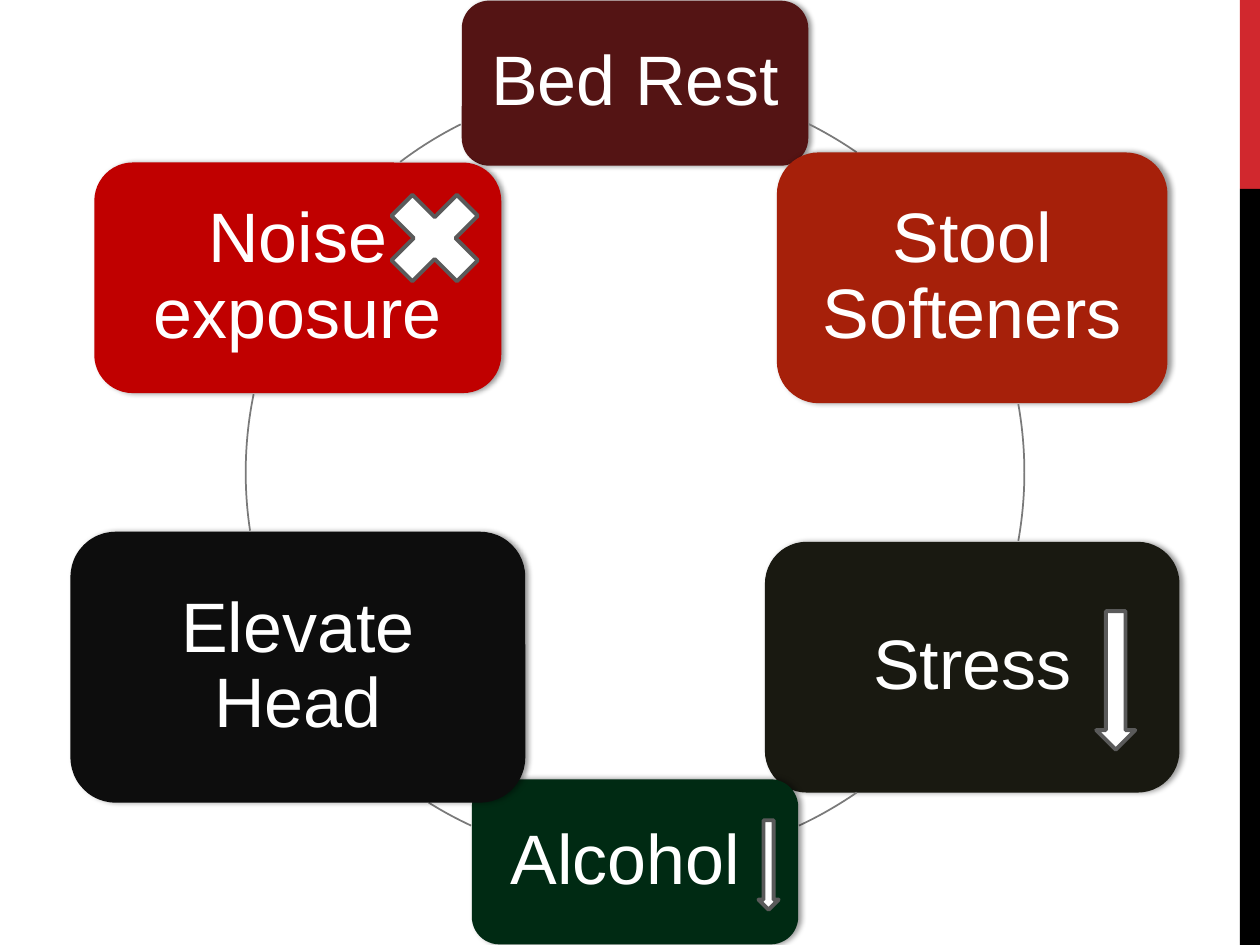
import math

from lxml import etree
from pptx import Presentation, util as u
from pptx.dml.color import RGBColor
from pptx.enum import shapes, text
from pptx.oxml import ns

WIDTH, HEIGHT = 10, 7.5
CENTER_X, CENTER_Y, RADIUS = 5.04, HEIGHT / 2, 3.09
ARC_UNITS_PER_DEGREE = 0.6
BAND_WIDTH, BAND_SPLIT = 0.16, HEIGHT / 5

COLORS = {
    "band_top": "D1282E", "band_bottom": "000000", "white": "FFFFFF",
    "ring": "7A7A7A", "outline": "5A5A5A", "shadow": "000000",
    "maroon": "541414", "rust": "A6200A", "olive": "191911",
    "green": "002A13", "charcoal": "0D0D0D", "red": "C00000",
}

MEASURES = [
    ("Bed Rest", "maroon", 2.75, 1.31, (-63.5, -55.3)),
    ("Stool Softeners", "rust", 3.1, 1.99, (-10.1, 10.1)),
    ("Stress", "olive", 3.29, 1.99, (55.3, 65.1)),
    ("Alcohol ", "green", 2.59, 1.31, (114.9, 122)),
    ("Elevate Head", "charcoal", 3.61, 2.15, (171.4, 191.6)),
    ("Noise exposure", "red", 3.23, 1.83, (232.9, 243.4)),
]

MARKS = [
    ("DOWN_ARROW", 8.7, 4.85, 0.31, 1.1),
    ("DOWN_ARROW", 6.02, 6.51, 0.16, 0.71),
    ("MATH_MULTIPLY", 2.95, 1.39, 1, 1),
]


def color(name):
    return RGBColor.from_string(COLORS[name])


def ring_point(degrees):
    angle = math.radians(degrees)
    return CENTER_X + RADIUS * math.cos(angle), CENTER_Y + RADIUS * math.sin(angle)


def add_shape(page, kind, left, top, width, height, fill=None, line=None, weight=2.25):
    shape = page.shapes.add_shape(
        getattr(shapes.MSO_SHAPE, kind), *map(u.Inches, (left, top, width, height)))
    shape.shadow.inherit = False
    if fill:
        shape.fill.solid()
        shape.fill.fore_color.rgb = color(fill)
    else:
        shape.fill.background()
    if line:
        shape.line.color.rgb = color(line)
        shape.line.width = u.Pt(weight)
    else:
        shape.line.fill.background()
    return shape


def add_shadow(shape):
    effects = shape._element.spPr.find(ns.qn("a:effectLst"))
    shadow = etree.SubElement(
        effects, ns.qn("a:outerShdw"), blurRad=str(u.Pt(3.1)),
        dist=str(u.Pt(1.8)), dir="0", algn="ctr", rotWithShape="0")
    tone = etree.SubElement(shadow, ns.qn("a:srgbClr"), val=COLORS["shadow"])
    etree.SubElement(tone, ns.qn("a:alpha"), val="40000")


def add_measure(page, label, fill, width, height, angle):
    x, y = ring_point(angle)
    box = add_shape(page, "ROUNDED_RECTANGLE", x - width / 2, y - height / 2,
                    width, height, fill)
    add_shadow(box)
    frame = box.text_frame
    frame.word_wrap = True
    frame.vertical_anchor = text.MSO_ANCHOR.MIDDLE
    frame.margin_left = frame.margin_right = u.Inches(0.15)
    frame.margin_top = frame.margin_bottom = u.Inches(0.17)
    para = frame.paragraphs[0]
    para.text = label
    para.alignment = text.PP_ALIGN.CENTER
    para.line_spacing = 0.9
    para.font.name = "Arial"
    para.font.size = u.Pt(40)
    para.font.color.rgb = color("white")


def add_arc(page, *ends):
    arc = add_shape(page, "ARC", CENTER_X - RADIUS, CENTER_Y - RADIUS,
                    2 * RADIUS, 2 * RADIUS, line="ring", weight=1)
    for index, degrees in enumerate(ends):
        arc.adjustments[index] = degrees % 360 * ARC_UNITS_PER_DEGREE


def main():
    deck = Presentation()
    deck.slide_width, deck.slide_height = u.Inches(WIDTH), u.Inches(HEIGHT)
    page = deck.slides.add_slide(deck.slide_layouts[6])
    band_left = WIDTH - BAND_WIDTH
    add_shape(page, "RECTANGLE", band_left, 0, BAND_WIDTH, BAND_SPLIT, "band_top")
    add_shape(page, "RECTANGLE", band_left, BAND_SPLIT, BAND_WIDTH,
              HEIGHT - BAND_SPLIT, "band_bottom")
    for index, (label, fill, width, height, arc) in enumerate(MEASURES):
        add_measure(page, label, fill, width, height, index * 360 / len(MEASURES) - 90)
        add_arc(page, *arc)
    for mark in MARKS:
        add_shape(page, *mark, "white", "outline")
    deck.save("out.pptx")


if __name__ == "__main__":
    main()
